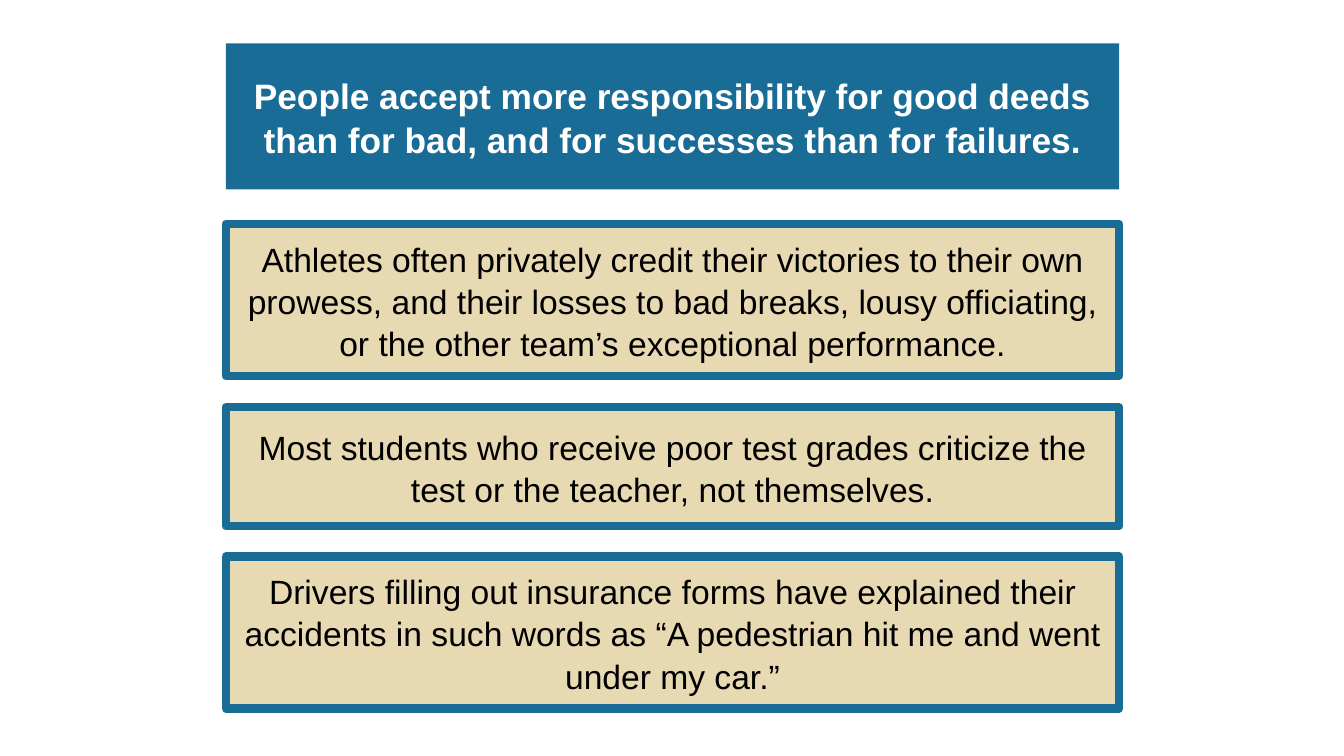
from pptx import Presentation
from pptx.dml.color import RGBColor
from pptx.enum.shapes import MSO_SHAPE as Shape
from pptx.enum.text import MSO_ANCHOR as Anchor, MSO_AUTO_SIZE as Fit, PP_ALIGN as Align
from pptx.util import Pt

PX = 9144  # EMU, 100 px to the inch
BLUE = RGBColor(0x18, 0x6C, 0x96)
SAND = RGBColor(0xE7, 0xD9, 0xB1)
WHITE = RGBColor(0xFF, 0xFF, 0xFF)
BLACK = RGBColor(0x00, 0x00, 0x00)

LEFT, WIDTH = 224, 886
CASES = [
    (222, 151, "Athletes often privately credit their victories to their own prowess, "
     "and their losses to bad breaks, lousy officiating, "
     "or the other team’s exceptional performance."),
    (404, 118, "Most students who receive poor test grades criticize the test "
     "or the teacher, not themselves."),
    (552, 151, "Drivers filling out insurance forms have explained their accidents "
     "in such words as “A pedestrian hit me and went under my car.”"),
]


class Deck:
    font = "Arial"
    lead = 1.05

    def __init__(self, wide, high):
        self.prs = Presentation()
        self.prs.slide_width, self.prs.slide_height = wide * PX, high * PX
        self.slide = self.prs.slides.add_slide(self.prs.slide_layouts[5])

    def label(self, shape, text, size, color, bold=False):
        frame = shape.text_frame
        frame.text = text
        frame.word_wrap = True
        frame.auto_size = Fit.NONE
        frame.vertical_anchor = Anchor.MIDDLE
        para = frame.paragraphs[0]
        para.alignment = Align.CENTER
        para.line_spacing = self.lead
        font = para.font
        font.name, font.size, font.bold = self.font, Pt(size), bold
        font.color.rgb = color

    def paint(self, shape, color):
        shape.fill.solid()
        shape.fill.fore_color.rgb = color

    def title(self, top, high, text):
        shape = self.slide.shapes.title
        shape.left, shape.top = LEFT * PX, top * PX
        shape.width, shape.height = WIDTH * PX, high * PX
        self.paint(shape, BLUE)
        self.label(shape, text, 25.2, WHITE, bold=True)

    def card(self, top, high, text):
        shape = self.slide.shapes.add_shape(
            Shape.RECTANGLE, LEFT * PX, top * PX, WIDTH * PX, high * PX)
        shape.shadow.inherit = False
        self.paint(shape, SAND)
        shape.line.color.rgb = BLUE
        shape.line.width = Pt(6)
        self.label(shape, text, 24, BLACK)


def main():
    deck = Deck(1333, 750)
    deck.title(43, 145, "People accept more responsibility for good deeds than for bad, "
               "and for successes than for failures.")
    for top, high, text in CASES:
        deck.card(top, high, text)
    deck.prs.save("out.pptx")


if __name__ == "__main__":
    main()
